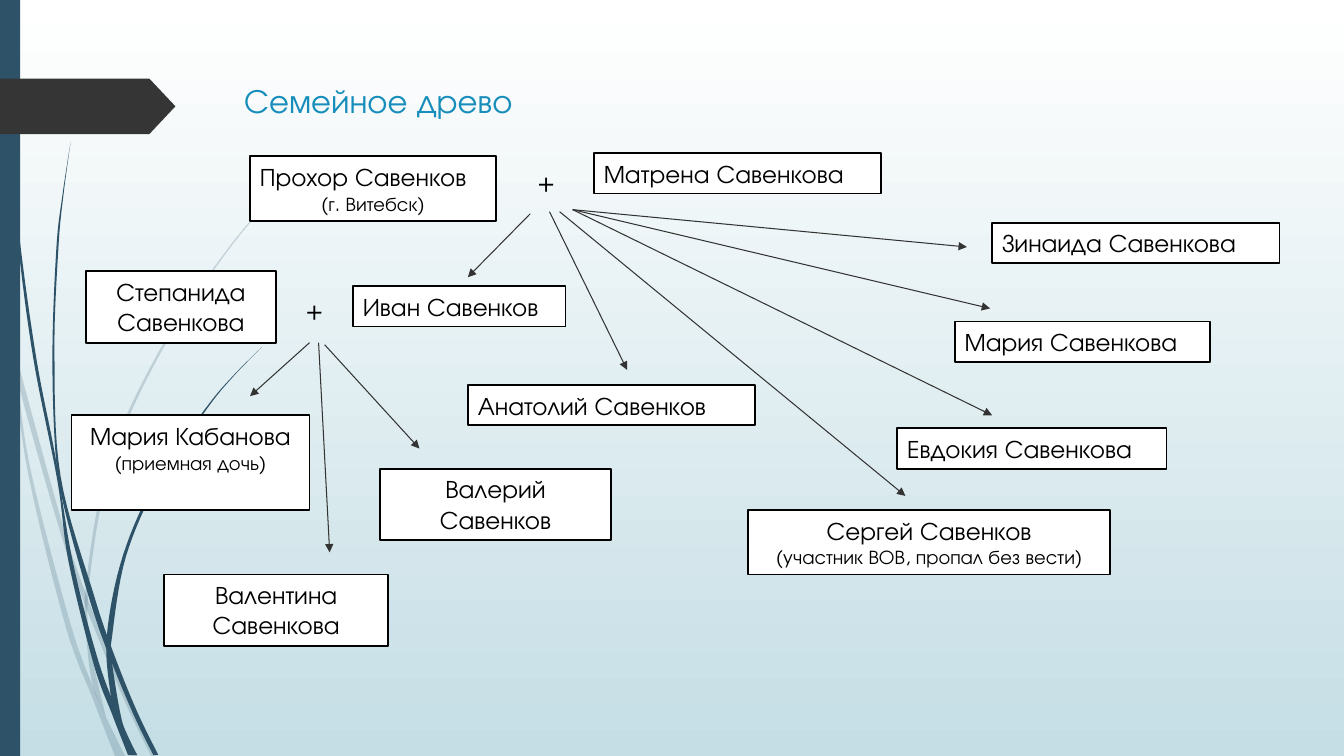
from lxml import etree
from pptx import Presentation
from pptx.dml.color import RGBColor
from pptx.enum.shapes import MSO_CONNECTOR as CONN, MSO_SHAPE as SHAPE
from pptx.enum.text import MSO_ANCHOR as ANCHOR, MSO_AUTO_SIZE as AUTO, PP_ALIGN as ALIGN
from pptx.oxml.ns import qn
from pptx.util import Inches, Pt

FONT = "TeX Gyre Adventor"
NAVY, BLACK, WHITE = "2E5369", "000000", "FFFFFF"

PALE_STRANDS = [
    ([(0, 2.99), (0.11, 3.5), (0.28, 4.7), (0.65, 6.21), (0.92, 6.93), (1.14, 7.5)],
     [(1.24, 7.5), (1.05, 7.11), (0.93, 6.83), (0.7, 6.19), (0.31, 4.69), (0.17, 3.76),
      (0.09, 3.22), (0, 2.82)]),
    ([(0.14, 3.45), (0.17, 3.76), (0.58, 5.22), (0.84, 5.99), (1.23, 6.94), (1.5, 7.5)],
     [(1.55, 7.5), (1.27, 6.92), (0.92, 6.07), (0.62, 5.2), (0.14, 3.45)]),
    ([(3.12, 1.53), (2.89, 1.75), (2.28, 2.44), (1.58, 3.48), (1.07, 4.61), (0.85, 5.84),
      (0.87, 6.46), (0.93, 6.83), (1.05, 7.11)],
     [(1.05, 7.11), (0.91, 6.46), (0.88, 5.84), (1.1, 4.62), (1.6, 3.49), (2.29, 2.45),
      (2.9, 1.75), (3.12, 1.54)]),
]
DARK_STRANDS = [
    ([(0.03, 0), (0.07, 1.1), (0.17, 2.33), (0.33, 3.55), (0.57, 4.77), (0.68, 5.57),
      (0.93, 6.59), (1.11, 7.08), (1.27, 7.49)],
     [(1.36, 7.49), (1.22, 7.19), (0.98, 6.57), (0.72, 5.56), (0.55, 4.53), (0.36, 3.55),
      (0.19, 2.32), (0.08, 1.09), (0.04, 0)]),
    ([(0.7, 1.41), (0.62, 1.93), (0.56, 2.45), (0.52, 3.49), (0.55, 4.49), (0.64, 5.05),
      (0.88, 5.92), (1.06, 6.45), (1.32, 7.08), (1.52, 7.49)],
     [(1.57, 7.49), (1.36, 7.06), (1.13, 6.49), (0.93, 5.9), (0.6, 4.72), (0.54, 3.49),
      (0.58, 2.45), (0.63, 1.93), (0.7, 1.41)]),
    ([(2.6, 3.44), (2.31, 3.73), (2.04, 4.05), (1.56, 4.74), (1.22, 5.51), (1.06, 6.31),
      (1.1, 6.91), (1.17, 7.22), (1.3, 7.49)],
     [(1.36, 7.49), (1.22, 7.19), (1.11, 6.56), (1.11, 6.33), (1.25, 5.52), (1.58, 4.76),
      (2.05, 4.06), (2.31, 3.74), (2.6, 3.44)]),
]
PEOPLE = [
    (1.78, 0.05, 2.44, 0.64, ALIGN.LEFT, "Прохор Савенков", "(г. Витебск)"),
    (5.19, 0.02, 2.85, 0.4, ALIGN.LEFT, "Матрена Савенкова", ""),
    (2.8, 1.34, 2.11, 0.4, ALIGN.LEFT, "Иван Савенков", ""),
    (8.77, 1.69, 2.53, 0.4, ALIGN.LEFT, "Мария Савенкова", ""),
    (9.14, 0.71, 2.85, 0.4, ALIGN.LEFT, "Зинаида Савенкова", ""),
    (8.2, 2.75, 2.67, 0.4, ALIGN.LEFT, "Евдокия Савенкова", ""),
    (6.72, 3.56, 3.59, 0.64, ALIGN.CENTER, "Сергей Савенков",
     "(участник ВОВ, пропал без вести)"),
    (3.94, 2.32, 2.85, 0.4, ALIGN.LEFT, "Анатолий Савенков", ""),
    (0.15, 1.19, 1.89, 0.71, ALIGN.CENTER, "Степанида Савенкова", ""),
    (0.01, 2.62, 2.36, 0.94, ALIGN.CENTER, "Мария Кабанова", "(приемная дочь)"),
    (0.93, 4.2, 2.22, 0.71, ALIGN.CENTER, "Валентина Савенкова", ""),
    (3.07, 3.15, 2.29, 0.71, ALIGN.CENTER, "Валерий Савенков", ""),
]
MARRIAGES = [(4.53, 0.1, 0.45, 0.4), (2.23, 1.37, 0.34, 0.4)]
DESCENTS = [
    (4.56, 0.62, 3.94, 1.25), (4.75, 0.6, 5.52, 2.17), (4.98, 0.58, 8.89, 0.95),
    (4.98, 0.58, 9.12, 1.56), (4.98, 0.58, 9.14, 2.62), (4.85, 0.6, 8.28, 3.42),
    (2.52, 1.92, 3.46, 2.95), (2.46, 1.9, 2.57, 3.98), (2.37, 1.9, 1.78, 2.43),
]


def rgb(value):
    """Turn a hex string into a colour."""
    return RGBColor.from_string(value)


def paint(sp, fill, line=None):
    """Give a shape a flat fill, an optional outline and no shadow."""
    sp.shadow.inherit = False
    sp.fill.solid()
    sp.fill.fore_color.rgb = rgb(fill)
    if line:
        sp.line.color.rgb = rgb(line)
        sp.line.width = Pt(1.25)
    else:
        sp.line.fill.background()


def write(sp, lines, color=BLACK):
    """Write (text, size, alignment) lines into a shape from its top."""
    tf = sp.text_frame
    tf.word_wrap = True
    tf.auto_size = AUTO.NONE
    tf.vertical_anchor = ANCHOR.TOP
    for i, (text, size, align) in enumerate(lines):
        p = tf.add_paragraph() if i else tf.paragraphs[0]
        p.alignment = align
        r = p.add_run()
        r.text = text
        r.font.size, r.font.name = Pt(size), FONT
        r.font.color.rgb = rgb(color)


def smooth(knots, steps=8):
    """Return points of a smooth curve through the knots."""
    ends = [knots[0], *knots, knots[-1]]
    points = [knots[0]]
    for a, b, c, d in zip(ends, ends[1:], ends[2:], ends[3:]):
        for t in (n / steps for n in range(1, steps + 1)):
            points.append(tuple(
                (2 * q + (r - p) * t + (2 * p - 5 * q + 4 * r - s) * t ** 2
                 + (3 * q - p - 3 * r + s) * t ** 3) / 2
                for p, q, r, s in zip(a, b, c, d)))
    return points


def add_strand(s, x, y, edges, opacity):
    """Draw one grass blade between its two edges."""
    points = [(Inches(x + px), Inches(y + py)) for edge in edges for px, py in smooth(edge)]
    builder = s.shapes.build_freeform(*points[0])
    builder.add_line_segments(points[1:])
    sp = builder.convert_to_shape()
    paint(sp, NAVY)
    if opacity < 100:
        clr = sp._element.spPr.find(".//" + qn("a:srgbClr"))
        etree.SubElement(clr, qn("a:alpha"), val=str(opacity * 1000))


def add_decoration(s, x, y, h):
    """Draw the grass, the side bar and the title pointer."""
    for strands, opacity in ((PALE_STRANDS, 20), (DARK_STRANDS, 100)):
        for edges in strands:
            add_strand(s, x, y, edges, opacity)
    bar = s.shapes.add_shape(SHAPE.RECTANGLE, Inches(x), Inches(y), Inches(0.2), Inches(h))
    paint(bar, NAVY)
    pointer = s.shapes.add_shape(SHAPE.PENTAGON, Inches(x), Inches(y + 0.78),
                                 Inches(1.74), Inches(0.55))
    pointer.adjustments[0] = 0.47
    paint(pointer, "353535")


def add_title(s, x, y, w, h):
    """Place and fill the title placeholder."""
    sp = s.shapes.title
    sp.left, sp.top, sp.width, sp.height = map(Inches, (x, y, w, h))
    write(sp, [("Семейное древо", 24, ALIGN.LEFT)], "178DBB")


def add_arrow(s, x1, y1, x2, y2):
    """Draw a thin arrow from parents to a child."""
    cn = s.shapes.add_connector(CONN.STRAIGHT, *map(Inches, (x1, y1, x2, y2)))
    cn.line.color.rgb = rgb("333333")
    cn.line.width = Pt(0.75)
    etree.SubElement(cn.line._get_or_add_ln(), qn("a:tailEnd"), type="triangle")
    etree.SubElement(cn._element.spPr, qn("a:effectLst"))


def add_tree(s, x, y):
    """Draw the people, marriages and descents of the family."""
    for px, py, w, h, align, name, note in PEOPLE:
        sp = s.shapes.add_shape(SHAPE.RECTANGLE, *map(Inches, (x + px, y + py, w, h)))
        paint(sp, WHITE, BLACK)
        lines = [(name, 18, align)]
        if note:
            lines.append((note, 14, ALIGN.CENTER))
        write(sp, lines)
    for px, py, w, h in MARRIAGES:
        sp = s.shapes.add_textbox(*map(Inches, (x + px, y + py, w, h)))
        write(sp, [("+", 18, ALIGN.LEFT)])
    for x1, y1, x2, y2 in DESCENTS:
        add_arrow(s, x + x1, y + y1, x + x2, y + y2)


def add_background(s):
    """Fill the slide from white at the top to pale blue."""
    fill = s.background.fill
    fill.gradient()
    fill.gradient_angle = 270
    for stop, color in zip(fill.gradient_stops, (WHITE, "C5DEE5")):
        stop.color.rgb = rgb(color)


def main():
    """Build the family tree slide."""
    prs = Presentation()
    prs.slide_width, prs.slide_height = Inches(13.33), Inches(7.5)
    s = prs.slides.add_slide(prs.slide_layouts[5])
    add_background(s)
    add_decoration(s, 0, 0, 7.5)
    add_title(s, 2.32, 0.74, 9.89, 0.5)
    add_tree(s, 0.7, 1.5)
    prs.save("out.pptx")


if __name__ == "__main__":
    main()
